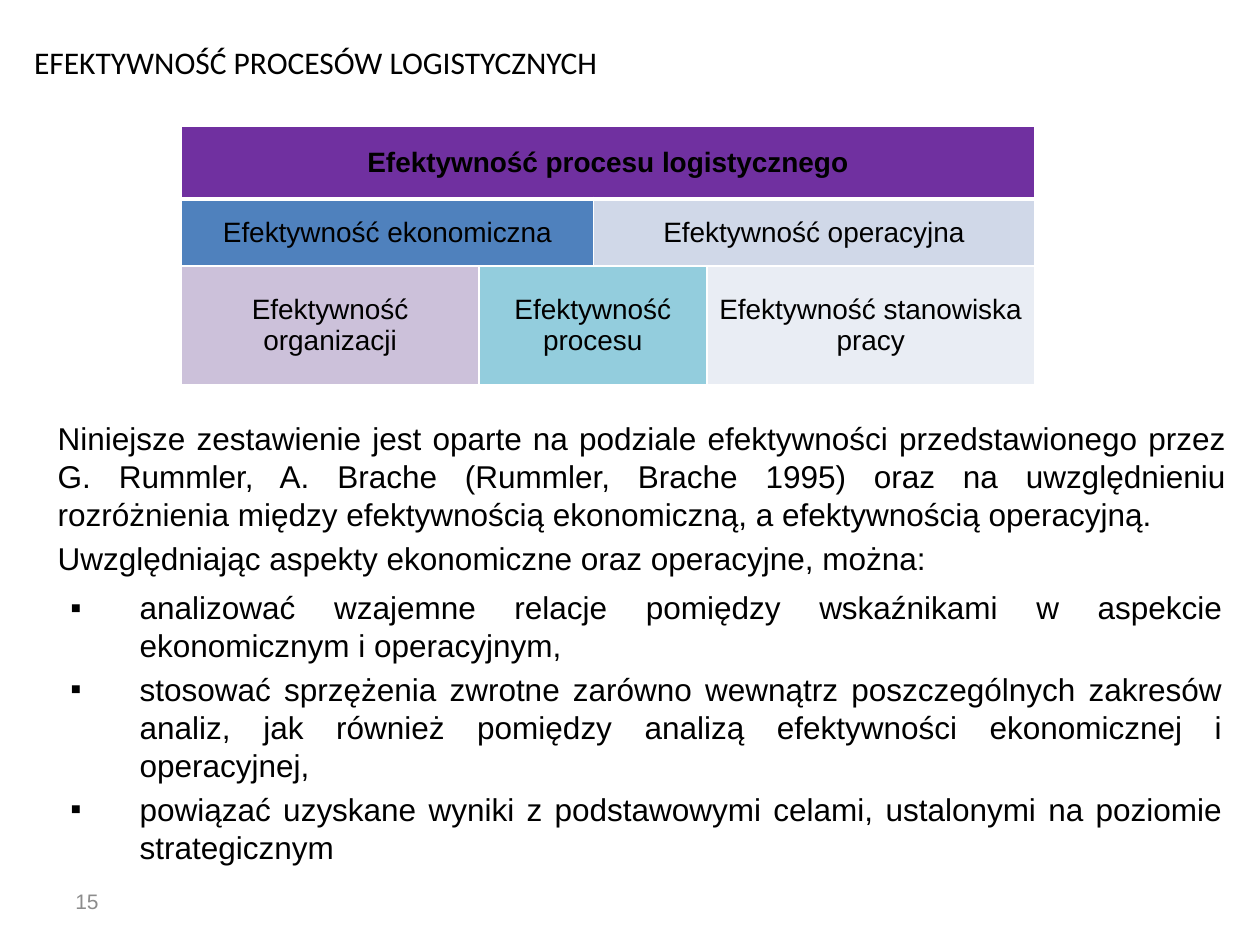
from lxml.etree import SubElement
from pptx import Presentation
from pptx.dml.color import RGBColor
from pptx.enum.text import MSO_ANCHOR as Anchor, PP_ALIGN as Align
from pptx.oxml.ns import qn
from pptx.util import Inches, Pt

COLORS = {
    "text": "000000", "number": "8C8C8C", "border": "FFFFFF",
    "process": "7030A0", "economic": "4F81BD", "operational": "D0D8E8",
    "organization": "CCC1DA", "flow": "93CDDD", "workstation": "E9EDF4",
}
COLUMNS = [2.36, 0.91, 0.9, 2.6]
ROWS = [0.58, 0.53, 0.94]
CELLS = [
    (0, 0, 3, "Efektywność procesu logistycznego", "process"),
    (1, 0, 1, "Efektywność ekonomiczna", "economic"),
    (1, 2, 3, "Efektywność operacyjna", "operational"),
    (2, 0, 0, "Efektywność organizacji", "organization"),
    (2, 1, 2, "Efektywność procesu", "flow"),
    (2, 3, 3, "Efektywność stanowiska pracy", "workstation"),
]
INTRODUCTION = [
    "Niniejsze zestawienie jest oparte na podziale efektywności przedstawionego "
    "przez G. Rummler, A. Brache (Rummler, Brache 1995) oraz na uwzględnieniu "
    "rozróżnienia między efektywnością ekonomiczną, a efektywnością operacyjną.",
    "Uwzględniając aspekty ekonomiczne oraz operacyjne, można:",
]
POSSIBILITIES = [
    "analizować wzajemne relacje pomiędzy wskaźnikami w aspekcie ekonomicznym "
    "i operacyjnym,",
    "stosować sprzężenia zwrotne zarówno wewnątrz poszczególnych zakresów analiz, "
    "jak również pomiędzy analizą efektywności ekonomicznej i operacyjnej,",
    "powiązać uzyskane wyniki z podstawowymi celami, ustalonymi na poziomie "
    "strategicznym",
]


def color(name):
    """Return the named colour."""
    return RGBColor.from_string(COLORS[name])


def format_runs(paragraph, size, font="Arial", bold=False, tint="text"):
    """Format every run of a paragraph."""
    for run in paragraph.runs:
        run.font.size, run.font.name, run.font.bold = Pt(size), font, bold
        run.font.color.rgb = color(tint)


def place(shape, box):
    """Move a shape to a box given in inches."""
    shape.left, shape.top, shape.width, shape.height = map(Inches, box)


def add_title(slide, box):
    """Fill and format the title placeholder."""
    title = slide.shapes.title
    place(title, box)
    title.text_frame.text = "EFEKTYWNOŚĆ PROCESÓW LOGISTYCZNYCH"
    title.text_frame.vertical_anchor = Anchor.TOP
    paragraph = title.text_frame.paragraphs[0]
    paragraph.alignment = Align.LEFT
    format_runs(paragraph, 18, "Calibri")


def set_borders(cell, row):
    """Draw white cell borders, thicker below the heading row."""
    properties = cell._tc.get_or_add_tcPr()
    for side in ("L", "R", "T", "B"):
        thick = (row, side) in ((0, "B"), (1, "T"))
        line = SubElement(properties, qn(f"a:ln{side}"), w=str(Pt(3 if thick else 1)))
        fill = SubElement(line, qn("a:solidFill"))
        SubElement(fill, qn("a:srgbClr"), val=COLORS["border"])


def add_efficiency_table(slide, box):
    """Add the table that divides efficiency into levels."""
    table = slide.shapes.add_table(len(ROWS), len(COLUMNS), *map(Inches, box)).table
    for column, width in zip(table.columns, COLUMNS):
        column.width = Inches(width)
    for row, height in zip(table.rows, ROWS):
        row.height = Inches(height)
    for row, first, last, text, fill in CELLS:
        for column in range(first, last + 1):
            part = table.cell(row, column)
            set_borders(part, row)
            part.fill.solid()
            part.fill.fore_color.rgb = color(fill)
        cell = table.cell(row, first)
        if last > first:
            cell.merge(table.cell(row, last))
        cell.margin_left = cell.margin_right = Inches(0.05)
        cell.margin_top = cell.margin_bottom = 0
        cell.vertical_anchor = Anchor.MIDDLE
        cell.text_frame.text = text
        paragraph = cell.text_frame.paragraphs[0]
        paragraph.alignment = Align.CENTER
        format_runs(paragraph, 16, bold=row == 0)


def add_text(slide, box, texts, margin=0, hanging=0, bullet=None, anchor=Anchor.TOP):
    """Add a box of justified paragraphs, with bullets if given."""
    shape = slide.shapes.add_textbox(*map(Inches, box))
    frame = shape.text_frame
    frame.word_wrap = True
    frame.vertical_anchor = anchor
    frame.text = "\n".join(texts)
    for index, paragraph in enumerate(frame.paragraphs):
        paragraph.alignment = Align.JUSTIFY
        paragraph.space_before = Pt(3.6 if index else 0)
        properties = paragraph._p.get_or_add_pPr()
        properties.set("marL", str(Inches(margin)))
        properties.set("indent", str(-Inches(hanging)))
        if bullet:
            SubElement(properties, qn("a:buFont"), typeface="Arial")
            SubElement(properties, qn("a:buChar"), char=bullet)
        format_runs(paragraph, 18)


def add_slide_number(slide, box):
    """Add the slide number."""
    frame = slide.shapes.add_textbox(*map(Inches, box)).text_frame
    frame.word_wrap = True
    frame.vertical_anchor = Anchor.MIDDLE
    frame.text = "15"
    format_runs(frame.paragraphs[0], 12, tint="number")


def main():
    """Build and save the presentation."""
    presentation = Presentation()
    presentation.slide_width, presentation.slide_height = Inches(10), Inches(7.5)
    slide = presentation.slides.add_slide(presentation.slide_layouts[5])
    add_title(slide, (0.17, 0.29, 9.08, 0.4))
    add_efficiency_table(slide, (1.44, 1, sum(COLUMNS), sum(ROWS)))
    add_text(slide, (0.17, 3.28, 9.66, 1.34), INTRODUCTION, 0.19, anchor=Anchor.MIDDLE)
    add_text(slide, (0.22, 4.62, 9.58, 2.4), POSSIBILITIES, 0.79, 0.55, "▪")
    add_slide_number(slide, (0.5, 6.95, 2.33, 0.4))
    presentation.save("out.pptx")


if __name__ == "__main__":
    main()
